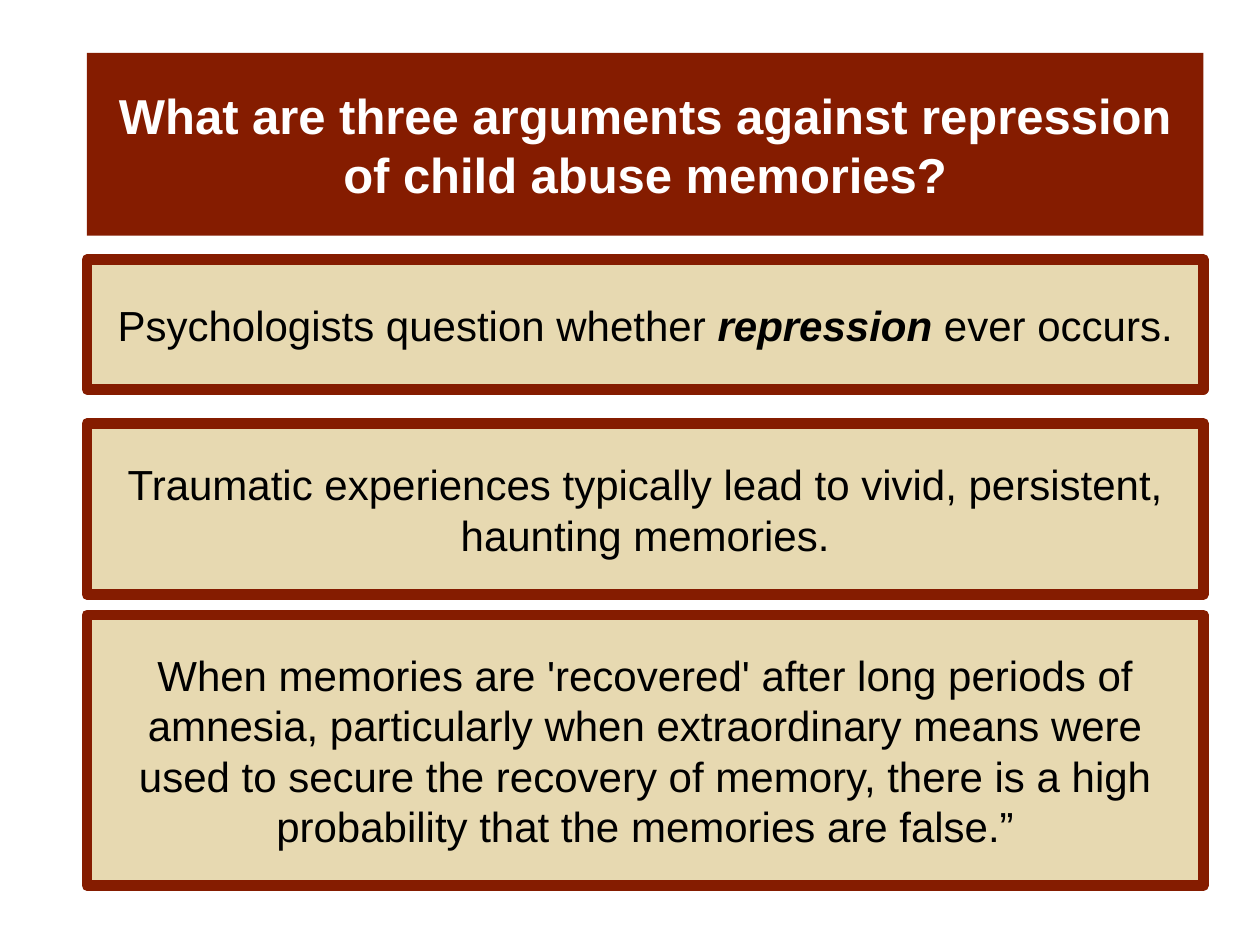
import pptx
import pptx.util
import pptx.dml.color
import pptx.enum.text
import pptx.oxml.ns
import lxml.etree

Inches, Pt = pptx.util.Inches, pptx.util.Pt
RGBColor = pptx.dml.color.RGBColor

MAROON = RGBColor(0x85, 0x1C, 0x00)
SAND = RGBColor(0xE7, 0xD9, 0xB1)
WHITE = RGBColor(0xFF, 0xFF, 0xFF)
BLACK = RGBColor(0x00, 0x00, 0x00)
LEFT, WIDTH = 0.69, 8.86
COMPARISON_LAYOUT = 4

# Each text is a list of (words, emphasised); each box has a top and a height in inches.
TITLE = (0.42, 1.45, [
    ("What are three arguments against repression of child abuse memories?", False)])
ARGUMENTS = [
    (2.06, 1.03, [("Psychologists question whether ", False),
                  ("repression ", True),
                  ("ever occurs.", False)]),
    (3.36, 1.36, [("Traumatic experiences typically lead to vivid, persistent, "
                   "haunting memories.", False)]),
    (4.88, 2.15, [("When memories are 'recovered' after long periods of amnesia, "
                   "particularly when extraordinary means were used to secure the "
                   "recovery of memory, there is a high probability that the "
                   "memories are false.”", False)]),
]


def fill_box(box, content, fill, color, size, bold):
    top, height, spans = content
    box.left, box.top = Inches(LEFT), Inches(top)
    box.width, box.height = Inches(WIDTH), Inches(height)
    box.fill.solid()
    box.fill.fore_color.rgb = fill

    frame = box.text_frame
    frame.word_wrap = True
    frame.auto_size = pptx.enum.text.MSO_AUTO_SIZE.NONE
    frame.vertical_anchor = pptx.enum.text.MSO_ANCHOR.MIDDLE
    para = frame.paragraphs[0]
    para.alignment = pptx.enum.text.PP_ALIGN.CENTER
    para.space_before = Pt(0)
    para.font.name, para.font.size = "Arial", Pt(size)
    para.font.bold = bold
    para.font.color.rgb = color
    for words, emphasised in spans:
        span = para.add_run()
        span.text = words
        if emphasised:
            span.font.bold = span.font.italic = True
    return para


def remove_bullet(para):
    properties = para._p.get_or_add_pPr()
    properties.set("marL", "0")
    properties.set("indent", "0")
    bullet = lxml.etree.Element(pptx.oxml.ns.qn("a:buNone"))
    properties.find(pptx.oxml.ns.qn("a:defRPr")).addprevious(bullet)


def main():
    deck = pptx.Presentation()
    deck.slide_width, deck.slide_height = Inches(10), Inches(7.5)
    page = deck.slides.add_slide(deck.slide_layouts[COMPARISON_LAYOUT])
    title, *bodies = page.placeholders

    fill_box(title, TITLE, MAROON, WHITE, 28, True)
    for box, argument in zip(bodies, ARGUMENTS):
        remove_bullet(fill_box(box, argument, SAND, BLACK, 24, False))
        box.line.color.rgb = MAROON
        box.line.width = Pt(6)
    for spare in bodies[len(ARGUMENTS):]:
        spare.element.getparent().remove(spare.element)

    deck.save("out.pptx")


if __name__ == "__main__":
    main()
